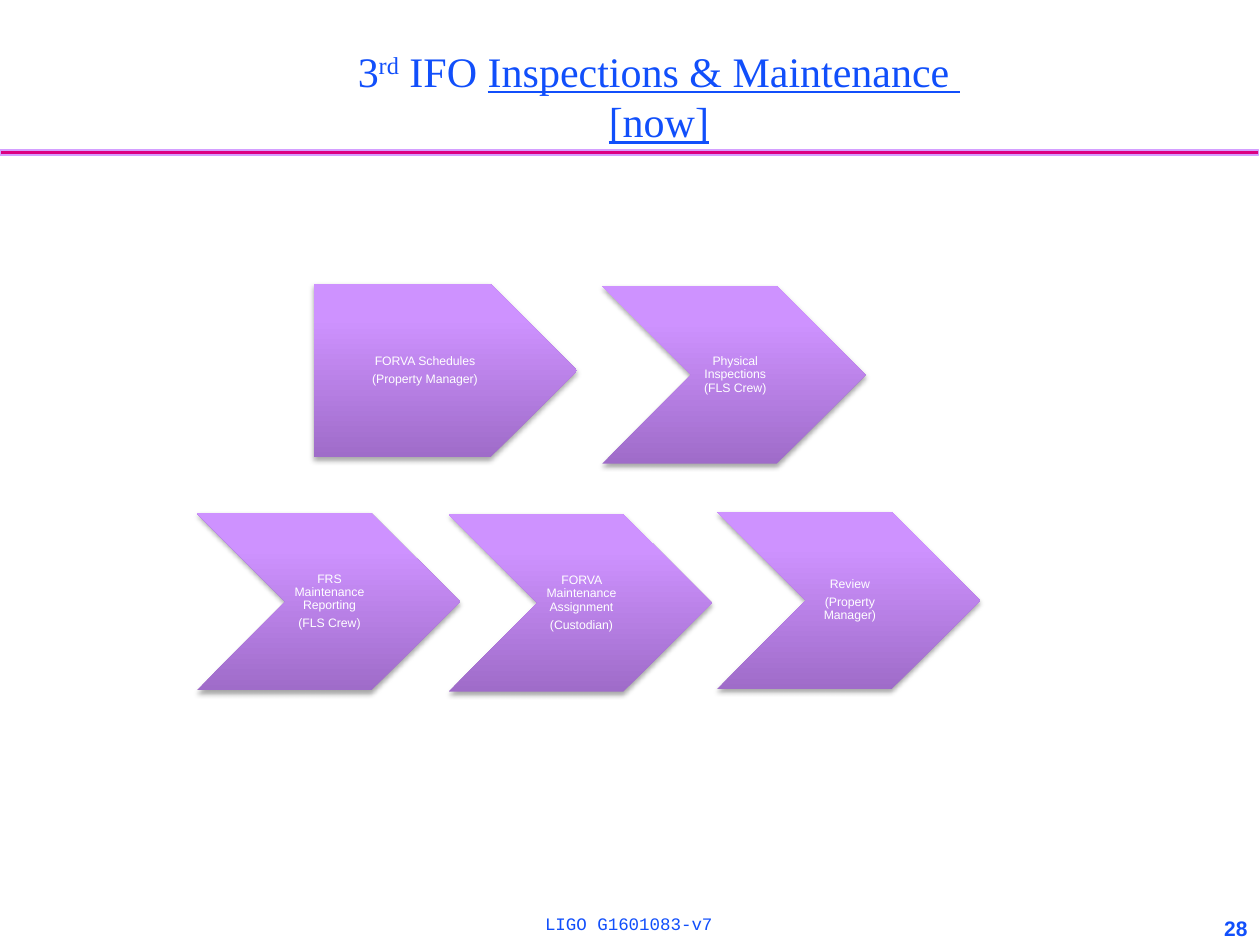
from copy import deepcopy
from dataclasses import dataclass

from lxml import etree
from pptx import Presentation
from pptx.dml.color import RGBColor
from pptx.enum.shapes import MSO_SHAPE
from pptx.enum.text import MSO_ANCHOR, PP_ALIGN
from pptx.oxml.ns import qn
from pptx.util import Inches, Pt

CENTER, RIGHT = PP_ALIGN.CENTER, PP_ALIGN.RIGHT
TOP, MIDDLE = MSO_ANCHOR.TOP, MSO_ANCHOR.MIDDLE
RECT, PENTAGON, CHEVRON = MSO_SHAPE.RECTANGLE, MSO_SHAPE.PENTAGON, MSO_SHAPE.CHEVRON


@dataclass(frozen=True)
class Theme:
    blue: str = "114FFB"
    white: str = "FFFFFF"
    rule: str = "DC0081"
    rule_edge: str = "D49FFF"
    step_stops: tuple = ((0, "9F6CC9"), (0.8, "CE92FF"), (1, "CF94FF"))
    serif: str = "Times New Roman"
    sans: str = "Arial"
    mono: str = "Courier New"
    title_size: float = 24
    step_size: float = 7
    footer_size: float = 10
    number_size: float = 12


THEME = Theme()

# Shape, left, top, width and height in inches, then the lines of the label
STEPS = [
    (PENTAGON, 2.49, 2.25, 2.09, 1.38, ["FORVA Schedules", "(Property Manager)"]),
    (CHEVRON, 4.78, 2.27, 2.09, 1.41, ["Physical Inspections (FLS Crew)"]),
    (CHEVRON, 1.56, 4.07, 2.09, 1.41, ["FRS Maintenance Reporting", "(FLS Crew)"]),
    (CHEVRON, 3.56, 4.08, 2.09, 1.41, ["FORVA Maintenance Assignment", "(Custodian)"]),
    (CHEVRON, 5.69, 4.06, 2.09, 1.41, ["Review", "(Property Manager)"]),
]


def add_run(p, text, font, size, color, bold=False, underline=False, raised=False):
    r = p.add_run()
    r.text = text
    r.font.name, r.font.size = font, Pt(size)
    r.font.color.rgb = RGBColor.from_string(color)
    r.font.bold, r.font.underline = bold, underline
    if raised:
        r.font._element.set("baseline", "30000")


def write(tf, paragraphs, align=CENTER, anchor=TOP, insets=(0.1, 0.05, 0.1, 0.05),
          wrap=True, line_spacing=None, space_after=None, **style):
    """Each paragraph is a list of (text, extra run format) pairs."""
    tf.word_wrap, tf.vertical_anchor = wrap, anchor
    tf.margin_left, tf.margin_top, tf.margin_right, tf.margin_bottom = map(Inches, insets)
    for i, runs in enumerate(paragraphs):
        p = tf.add_paragraph() if i else tf.paragraphs[0]
        p.alignment = align
        if line_spacing:
            p.line_spacing = line_spacing
        if space_after:
            p.space_after = Pt(space_after)
        for text, extra in runs:
            add_run(p, text, **style, **extra)


def add_text(s, left, top, width, height, paragraphs, **style):
    box = s.shapes.add_textbox(Inches(left), Inches(top), Inches(width), Inches(height))
    write(box.text_frame, paragraphs, **style)


def add_shape(s, kind, left, top, width, height):
    sp = s.shapes.add_shape(kind, Inches(left), Inches(top), Inches(width), Inches(height))
    sp.shadow.inherit = False
    return sp


def fill_gradient(sp, stops):
    sp.fill.gradient()
    sp.fill.gradient_angle = 90
    gs_list = sp._element.spPr.find(".//" + qn("a:gsLst"))
    while len(gs_list) < len(stops):
        gs_list.append(deepcopy(gs_list[0]))
    for stop, (position, color) in zip(sp.fill.gradient_stops, stops):
        stop.position = position
        stop.color.rgb = RGBColor.from_string(color)


def add_shadow(sp):
    effects = sp._element.spPr.find(qn("a:effectLst"))
    shadow = etree.SubElement(effects, qn("a:outerShdw"), blurRad=str(Pt(3.1)),
                              dist=str(Pt(1.8)), dir="5400000", rotWithShape="0")
    color = etree.SubElement(shadow, qn("a:srgbClr"), val="000000")
    etree.SubElement(color, qn("a:alpha"), val="35000")


def add_rule(s):
    sp = add_shape(s, RECT, 0, 1.19, 9.99, 0.04)
    sp.fill.solid()
    sp.fill.fore_color.rgb = RGBColor.from_string(THEME.rule)
    sp.line.color.rgb = RGBColor.from_string(THEME.rule_edge)
    sp.line.width = Pt(0.75)


def add_step(s, kind, left, top, width, height, lines):
    sp = add_shape(s, kind, left, top, width, height)
    fill_gradient(sp, THEME.step_stops)
    sp.line.fill.background()
    add_shadow(sp)
    write(sp.text_frame, [[(line, {})] for line in lines], anchor=MIDDLE,
          insets=(0.03, 0.02, 0.01, 0.02), line_spacing=0.9, space_after=2.8,
          font=THEME.sans, size=THEME.step_size, color=THEME.white)


def main():
    prs = Presentation()
    prs.slide_width, prs.slide_height = Inches(10), Inches(7.5)
    s = prs.slides.add_slide(prs.slide_layouts[6])

    # Title and rule
    add_rule(s)
    title = [
        [("3", {}), ("rd", {"raised": True}), (" IFO ", {}),
         ("Inspections & Maintenance ", {"underline": True})],
        [("[now]", {"underline": True})],
    ]
    add_text(s, 1.21, 0.31, 8.04, 0.91, title,
             font=THEME.serif, size=THEME.title_size, color=THEME.blue)

    # Process steps
    for step in STEPS:
        add_step(s, *step)

    # Footer
    add_text(s, 2.6, 7.2, 4.78, 0.3, [[("LIGO G1601083-v7", {})]],
             font=THEME.mono, size=THEME.footer_size, color=THEME.blue)
    add_text(s, 8.85, 7.23, 1.15, 0.27, [[("28", {})]], align=RIGHT, anchor=MIDDLE,
             wrap=False, font=THEME.sans, size=THEME.number_size, color=THEME.blue, bold=True)

    prs.save("out.pptx")


if __name__ == "__main__":
    main()
